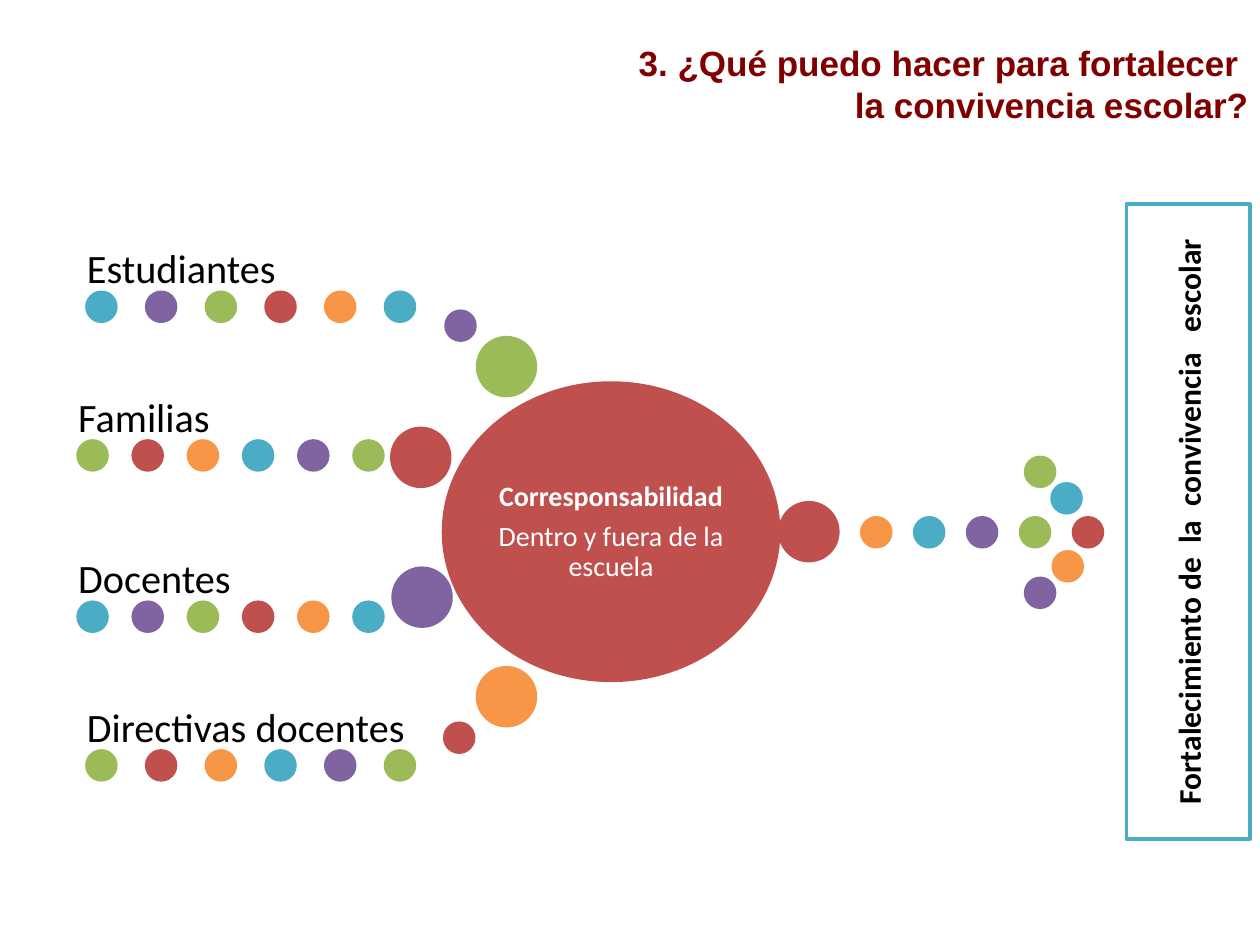
"""Build the slide on shared responsibility for school life."""
import pptx
import pptx.dml.color
import pptx.enum.shapes
import pptx.enum.text
import pptx.util

Inches = pptx.util.Inches
Shape = pptx.enum.shapes.MSO_SHAPE
Align = pptx.enum.text.PP_ALIGN
Anchor = pptx.enum.text.MSO_ANCHOR

TEAL, PURPLE, GREEN, RED, ORANGE = "4BACC6", "8064A2", "9BBB59", "C0504D", "F79646"
CYCLE = [TEAL, PURPLE, GREEN, RED, ORANGE]
DOT, BALL = 0.23, 0.46


def color(code):
    return pptx.dml.color.RGBColor.from_string(code)


def place(shape, left, top, width, height):
    shape.left, shape.top = Inches(left), Inches(top)
    shape.width, shape.height = Inches(width), Inches(height)


def frame(shape, anchor=Anchor.MIDDLE, pad=0.1):
    area = shape.text_frame
    area.word_wrap = True
    area.auto_size = pptx.enum.text.MSO_AUTO_SIZE.NONE
    area.vertical_anchor = anchor
    area.margin_left = area.margin_right = Inches(pad)
    area.margin_top = area.margin_bottom = Inches(min(pad, 0.05))
    return area


def write(area, text, size=16, font="Calibri", ink="000000", bold=False,
          align=Align.LEFT, lead=None, after=0):
    para = area.paragraphs[0] if not area.text else area.add_paragraph()
    para.alignment = align
    para.line_spacing = lead
    para.space_before = pptx.util.Pt(0)
    para.space_after = pptx.util.Pt(after)
    run = para.add_run()
    run.text = text
    run.font.size = pptx.util.Pt(size)
    run.font.name = font
    run.font.bold = bold
    run.font.color.rgb = color(ink)


def draw(slide, kind, left, top, width, height, fill, line):
    shape = slide.shapes.add_shape(
        kind, Inches(left), Inches(top), Inches(width), Inches(height))
    shape.shadow.inherit = False
    shape.fill.solid()
    shape.fill.fore_color.rgb = color(fill)
    shape.line.color.rgb = color(line)
    shape.line.width = pptx.util.Pt(2)
    return shape


def disc(slide, left, top, size, fill):
    draw(slide, Shape.OVAL, left, top, size, size, fill, fill)


def trail(slide, left, top, step, count, start):
    for i in range(count):
        disc(slide, left + i * step, top, DOT, CYCLE[(start + i) % len(CYCLE)])


def label(slide, text, left, top, width):
    box = slide.shapes.add_textbox(
        Inches(left), Inches(top), Inches(width), Inches(0.57))
    write(frame(box, Anchor.BOTTOM, 0), text, size=23, lead=0.9)


def title(slide):
    head = slide.shapes.title
    place(head, 3.24, 0.15, 6.77, 1.02)
    area = frame(head)
    for text in ("3. ¿Qué puedo hacer para fortalecer ", "la convivencia escolar?"):
        write(area, text, size=20, font="Arial", ink="800000", bold=True,
              align=Align.RIGHT)


def arrow(slide):
    trail(slide, 6.84, 4.11, 0.42, 5, 4)
    disc(slide, 6.19, 3.99, BALL, RED)
    for left, top, fill in ((8.14, 3.63, GREEN), (8.14, 4.59, PURPLE),
                            (8.35, 3.84, TEAL), (8.36, 4.38, ORANGE)):
        disc(slide, left, top, DOT, fill)


def core(slide):
    draw(slide, Shape.OVAL, 3.52, 3.04, 2.66, 2.36, RED, RED)
    box = slide.shapes.add_textbox(
        Inches(3.91), Inches(3.39), Inches(1.88), Inches(1.67))
    area = frame(box, pad=0.02)
    style = dict(ink="FFFFFF", align=Align.CENTER, lead=0.9, after=5.6)
    write(area, "Corresponsabilidad", bold=True, **style)
    write(area, "Dentro y fuera de la escuela", **style)


def groups(slide):
    rows = (("Estudiantes", 0.69, 2.32, 0.474, 2.59, 0),
            ("Familias", 0.62, 3.5, 0.438, 2.41, 2),
            ("Docentes", 0.62, 4.78, 0.438, 2.41, 0),
            ("Directivas docentes", 0.69, 5.96, 0.474, 2.59, 2))
    for text, left, top, step, width, start in rows:
        trail(slide, left, top, round(step, 3), 6, start)
        label(slide, text, left, top - 0.57, width)
    for left, top, size, fill in ((3.54, 2.47, DOT, PURPLE), (3.79, 2.68, BALL, GREEN),
                                  (3.11, 3.4, BALL, RED), (3.12, 4.51, BALL, PURPLE),
                                  (3.53, 5.74, DOT, RED), (3.79, 5.3, BALL, ORANGE)):
        disc(slide, left, top, size, fill)


def goal(slide):
    panel = draw(slide, Shape.RECTANGLE, 6.91, 3.65, 5.04, 0.98, "FFFFFF", TEAL)
    panel.rotation = 270
    write(frame(panel), "Fortalecimiento de  la  convivencia   escolar",
          size=18, bold=True, align=Align.CENTER)


def main():
    deck = pptx.Presentation()
    deck.slide_width, deck.slide_height = Inches(10), Inches(7.5)
    slide = deck.slides.add_slide(deck.slide_layouts[5])
    title(slide)
    arrow(slide)
    core(slide)
    groups(slide)
    goal(slide)
    deck.save("out.pptx")


if __name__ == "__main__":
    main()
